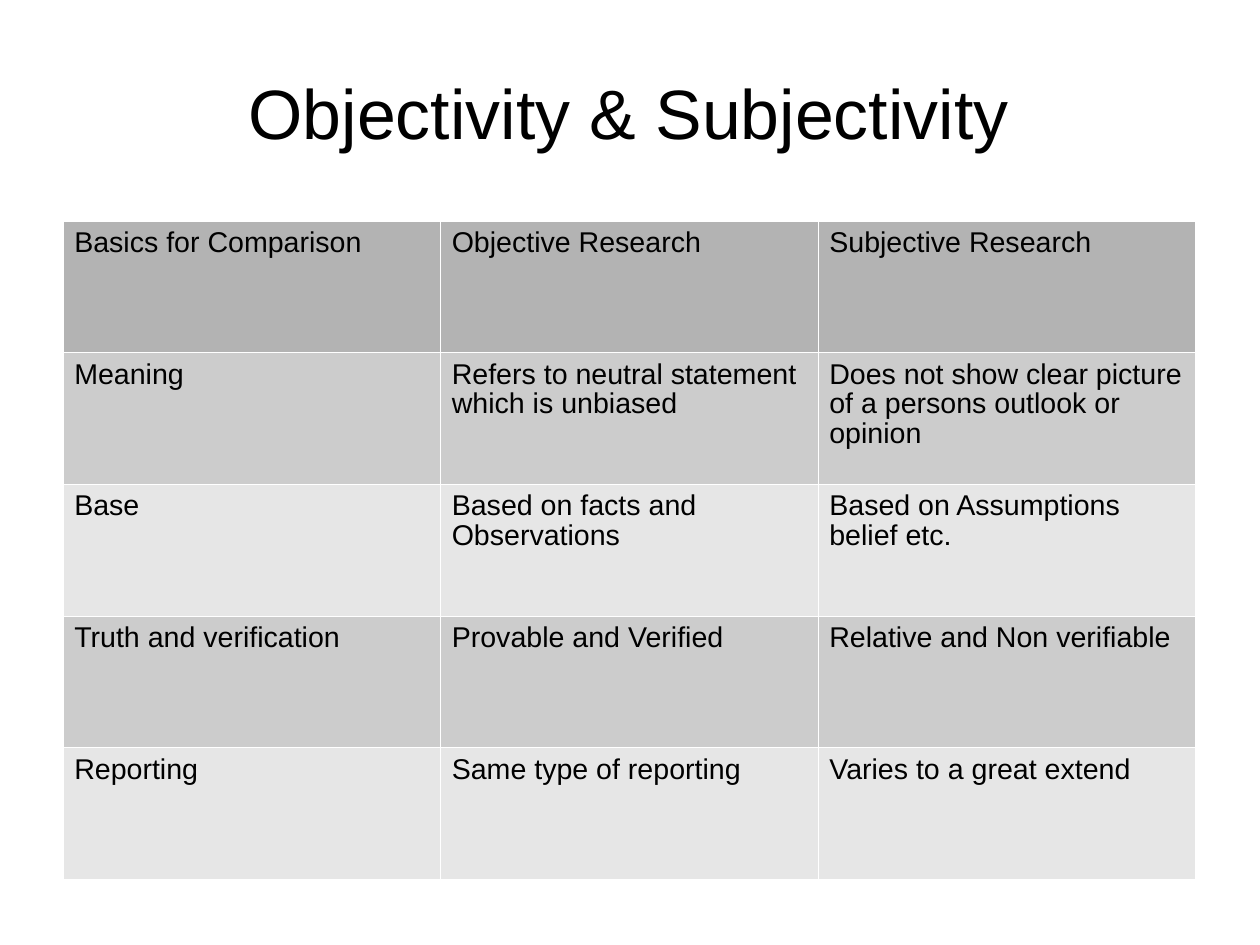
from lxml import etree
from pptx import Presentation
from pptx.dml.color import RGBColor
from pptx.enum.text import MSO_ANCHOR, PP_ALIGN
from pptx.oxml.ns import qn
from pptx.util import Emu, Inches, Pt

CENTER = PP_ALIGN.CENTER
MIDDLE = MSO_ANCHOR.MIDDLE
TITLE_ONLY_LAYOUT = 5
COLORS = {
    "text": "000000",
    "header": "B3B3B3",
    "odd row": "CCCCCC",
    "even row": "E6E6E6",
    "border": "FFFFFF",
}
LEFT, WIDTH = Inches(0.55), Inches(9.91)
ROWS = [
    ("Basics for Comparison", "Objective Research", "Subjective Research"),
    ("Meaning", "Refers to neutral statement which is unbiased",
     "Does not show clear picture of a persons outlook or opinion"),
    ("Base", "Based on facts and Observations", "Based on Assumptions belief etc."),
    ("Truth and verification", "Provable and Verified", "Relative and Non verifiable"),
    ("Reporting", "Same type of reporting", "Varies to a great extend"),
]


def format_paragraph(paragraph, size):
    paragraph.line_spacing = 0.93
    paragraph.font.name = "Arial"
    paragraph.font.size = Pt(size)
    paragraph.font.color.rgb = RGBColor.from_string(COLORS["text"])


def add_borders(cell):
    properties = cell._tc.get_or_add_tcPr()
    for side in ("lnL", "lnR", "lnT", "lnB"):
        line = etree.SubElement(properties, qn(f"a:{side}"), w=str(Pt(0.06)))
        fill = etree.SubElement(line, qn("a:solidFill"))
        etree.SubElement(fill, qn("a:srgbClr"), val=COLORS["border"])


# Standard 28 x 21 cm screen page
presentation = Presentation()
presentation.slide_width = Emu(10080625)
presentation.slide_height = Emu(7559675)
slide = presentation.slides.add_slide(presentation.slide_layouts[TITLE_ONLY_LAYOUT])

title = slide.shapes.title
title.left, title.top = LEFT, Inches(0.33)
title.width, title.height = WIDTH, Inches(1.37)
title_frame = title.text_frame
title_frame.text = "Objectivity & Subjectivity"
title_frame.word_wrap = True
title_frame.vertical_anchor = MIDDLE
title_frame.margin_left = title_frame.margin_right = 0
title_frame.margin_top = title_frame.margin_bottom = 0
title_frame.paragraphs[0].alignment = CENTER
format_paragraph(title_frame.paragraphs[0], 44)

table = slide.shapes.add_table(
    len(ROWS), len(ROWS[0]), LEFT, Inches(1.93), WIDTH, Inches(5.76)
).table
table.first_row = False
table.horz_banding = False

for row_index, texts in enumerate(ROWS):
    if row_index == 0:
        row_color = COLORS["header"]
    else:
        row_color = COLORS["odd row" if row_index % 2 else "even row"]
    for column_index, text in enumerate(texts):
        cell = table.cell(row_index, column_index)
        cell.text = text
        cell.margin_left = cell.margin_right = Inches(0.1)
        cell.margin_top, cell.margin_bottom = Inches(0.07), Inches(0.05)
        add_borders(cell)
        cell.fill.solid()
        cell.fill.fore_color.rgb = RGBColor.from_string(row_color)
        format_paragraph(cell.text_frame.paragraphs[0], 18)

presentation.save("out.pptx")
